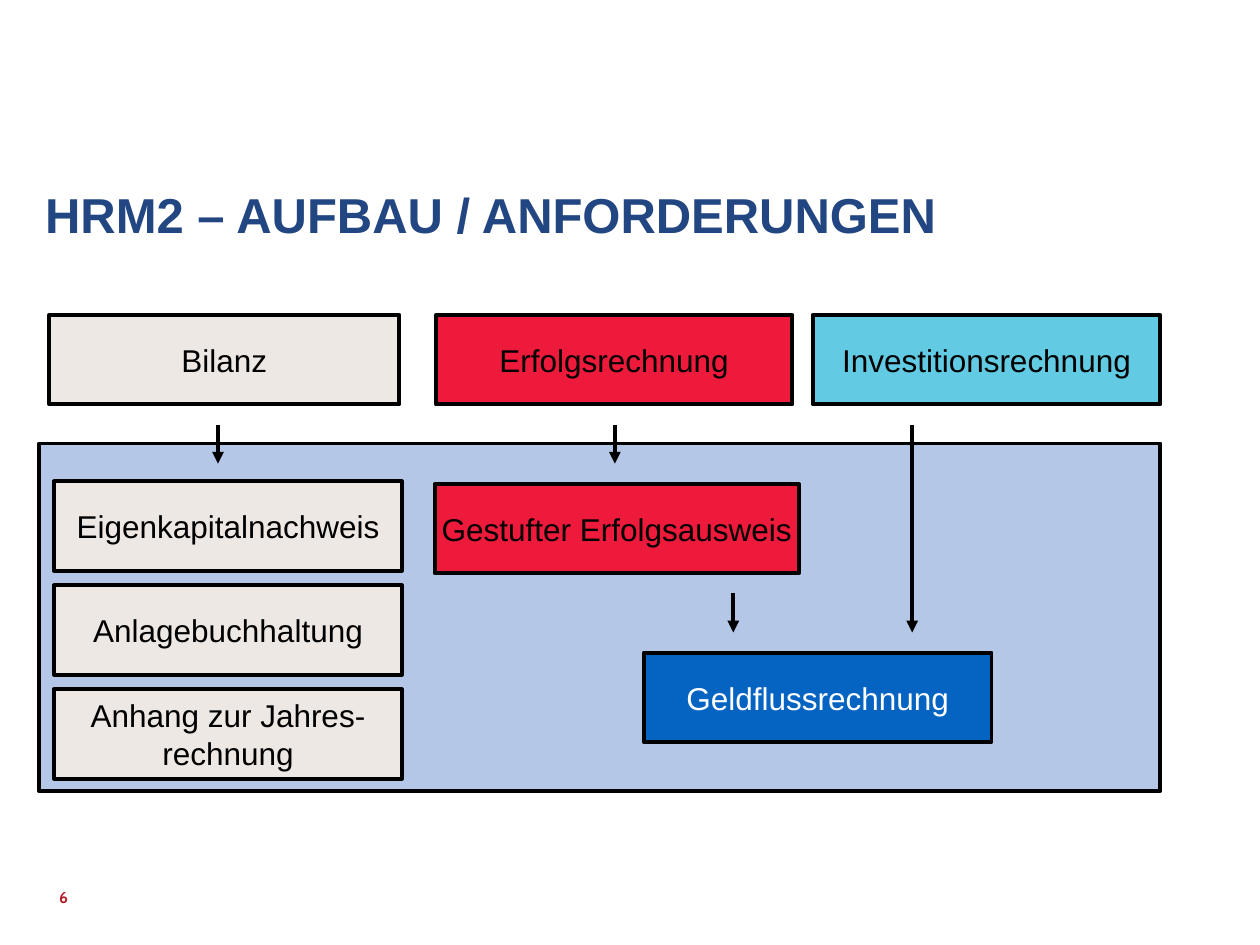
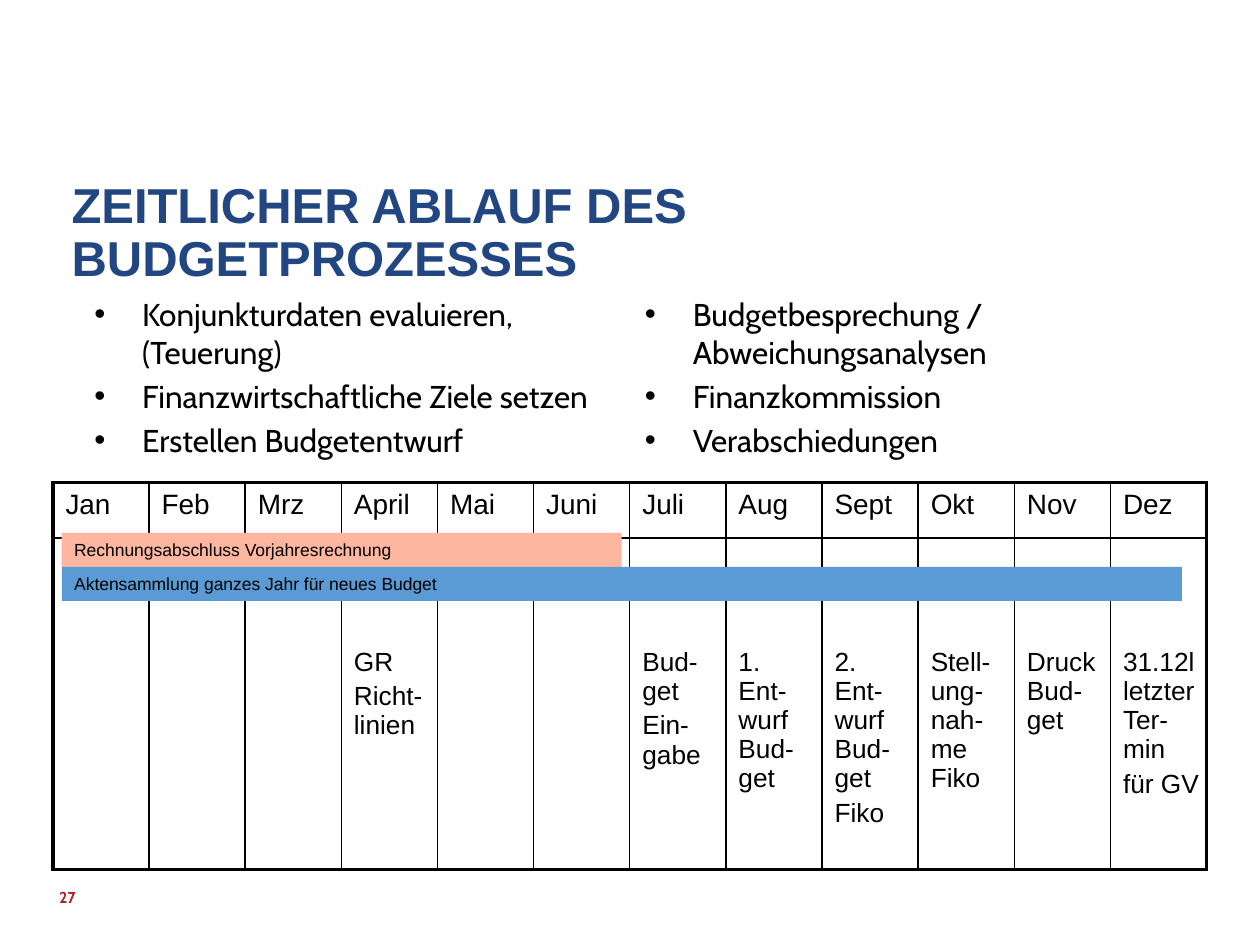
from dataclasses import dataclass

from lxml import etree
from pptx import Presentation
from pptx.dml.color import RGBColor
from pptx.enum.shapes import MSO_CONNECTOR, MSO_SHAPE
from pptx.enum.text import MSO_ANCHOR, PP_ALIGN
from pptx.oxml.ns import qn
from pptx.util import Inches, Pt

RECTANGLE = MSO_SHAPE.RECTANGLE
STRAIGHT = MSO_CONNECTOR.STRAIGHT
MIDDLE = MSO_ANCHOR.MIDDLE
LEFT, CENTER = PP_ALIGN.LEFT, PP_ALIGN.CENTER

# The slide is a grid of 100 columns and 75 rows of square cells.
COLUMNS, ROWS = 100, 75
CELL = Inches(0.1)


@dataclass(frozen=True)
class Theme:
    heading_font: str = "Arial"
    body_font: str = "Cabin"
    title: str = "224681"
    number: str = "B21D24"
    black: str = "000000"
    white: str = "FFFFFF"
    panel: str = "B4C7E7"
    balance: str = "EEE8E5"
    income: str = "ED1A3B"
    investment: str = "62CAE3"
    cash_flow: str = "0563C1"
    closing_bar: str = "FDB7A1"
    collection_bar: str = "5B9BD5"
    title_size: float = 28
    body_size: float = 18
    month_size: float = 16
    task_size: float = 15
    bar_size: float = 10
    number_size: float = 9
    thick: float = 2.25
    thin: float = 1


THEME = Theme()


@dataclass(frozen=True)
class Box:
    """An area in grid columns and rows."""
    left: float
    top: float
    width: float
    height: float

    def inner(self, column, row, width, height):
        return Box(self.left + column, self.top + row, width, height)

    def emu(self):
        return [round(n * CELL) for n in (self.left, self.top, self.width, self.height)]


def rgb(color):
    return RGBColor.from_string(color)


def style(para, size, color=THEME.black, font=THEME.heading_font, bold=False):
    para.font.size = Pt(size)
    para.font.name = font
    para.font.bold = bold
    para.font.color.rgb = rgb(color)


def fill_paragraphs(frame, texts):
    """Write one paragraph per text and yield each."""
    for index, text in enumerate(texts):
        para = frame.paragraphs[0] if index == 0 else frame.add_paragraph()
        para.text = text
        yield para


def add_text(page, box):
    frame = page.shapes.add_textbox(*box.emu()).text_frame
    frame.word_wrap = True
    return frame


def add_title(page, box, text):
    frame = add_text(page, box)
    frame.margin_right = Inches(0.3)
    para = frame.paragraphs[0]
    para.text = text
    para.line_spacing = 0.9
    style(para, THEME.title_size, THEME.title, bold=True)


def add_page_number(page, number):
    frame = add_text(page, Box(4.7, 69.2, 22.5, 4))
    frame.vertical_anchor = MIDDLE
    frame.margin_left = frame.margin_right = frame.margin_top = frame.margin_bottom = 0
    para = frame.paragraphs[0]
    para.text = str(number)
    style(para, THEME.number_size, THEME.number, THEME.body_font, bold=True)


def add_page(deck, title_box, title, number):
    page = deck.slides.add_slide(deck.slide_layouts[6])
    add_title(page, title_box, title)
    add_page_number(page, number)
    return page


def add_rectangle(page, box, fill, outlined=True):
    shape = page.shapes.add_shape(RECTANGLE, *box.emu())
    shape.shadow.inherit = False
    shape.fill.solid()
    shape.fill.fore_color.rgb = rgb(fill)
    if outlined:
        shape.line.color.rgb = rgb(THEME.black)
        shape.line.width = Pt(THEME.thick)
    else:
        shape.line.fill.background()
    return shape


def label(shape, text, size, color=THEME.black, align=CENTER):
    frame = shape.text_frame
    frame.word_wrap = False
    frame.vertical_anchor = MIDDLE
    frame.margin_top = frame.margin_bottom = 0
    para = frame.paragraphs[0]
    para.text = text
    para.alignment = align
    style(para, size, color)


def add_down_arrow(page, box):
    """Draw an arrow from the top to the bottom of a box without width."""
    left, top, _, height = box.emu()
    arrow = page.shapes.add_connector(STRAIGHT, left, top, left, top + height)
    arrow.line.color.rgb = rgb(THEME.black)
    arrow.line.width = Pt(THEME.thick)
    properties = arrow._element.spPr
    etree.SubElement(properties.find(qn("a:ln")), qn("a:tailEnd"), type="triangle")
    etree.SubElement(properties, qn("a:effectLst"))


def add_statement_diagram(page, area):
    node_height = 7.1
    add_rectangle(page, area.inner(0, 10.2, area.width, 27.6), THEME.panel)
    nodes = [
        ("Bilanz", 0.8, 0, 27.8, THEME.balance),
        ("Erfolgsrechnung", 31.5, 0, 28.3, THEME.income),
        ("Investitionsrechnung", 61.4, 0, 27.6, THEME.investment),
        ("Gestufter Erfolgsausweis", 31.4, 13.4, 28.9, THEME.income),
        ("Geldflussrechnung", 48, 26.8, 27.6, THEME.cash_flow),
    ]
    balance_details = ("Eigenkapitalnachweis", "Anlagebuchhaltung",
                       "Anhang zur Jahres-\vrechnung")
    nodes += [(text, 1.2, 13.2 + 8.25 * index, 27.6, THEME.balance)
              for index, text in enumerate(balance_details)]
    for text, column, row, width, fill in nodes:
        node = add_rectangle(page, area.inner(column, row, width, node_height), fill)
        color = THEME.white if fill == THEME.cash_flow else THEME.black
        label(node, text, THEME.body_size, color)
    for column, row, length in ((14.2, 8.7, 3.1), (45.7, 8.7, 3.1),
                                (55.1, 22.1, 3.1), (69.3, 8.7, 16.5)):
        add_down_arrow(page, area.inner(column, row, 0, length))


def add_bullets(page, box, texts):
    hanging = Inches(0.38)
    for index, para in enumerate(fill_paragraphs(add_text(page, box), texts)):
        properties = para._p.get_or_add_pPr()
        properties.set("marL", str(hanging))
        properties.set("indent", str(-hanging))
        etree.SubElement(properties, qn("a:buFont"), typeface="Arial")
        etree.SubElement(properties, qn("a:buChar"), char="•")
        if index:
            para.space_before = Pt(0.2 * THEME.body_size)
        style(para, THEME.body_size, font=THEME.body_font)


def set_borders(cell, widths):
    """Rule the left, right, top and bottom of a cell in that order."""
    properties = cell._tc.get_or_add_tcPr()
    for side, width in zip("LRTB", widths):
        line = etree.SubElement(properties, qn(f"a:ln{side}"), w=str(Pt(width)))
        solid = etree.SubElement(line, qn("a:solidFill"))
        etree.SubElement(solid, qn("a:srgbClr"), val=THEME.black)


def add_calendar(page, area, months):
    """Draw a table with a month and its tasks in each column."""
    header = 4.4
    table = page.shapes.add_table(2, len(months), *area.emu()).table
    table.first_row = table.horz_banding = False
    table.rows[0].height = round(header * CELL)
    table.rows[1].height = round((area.height - header) * CELL)
    last = len(months) - 1
    for index, (month, tasks) in enumerate(months):
        table.columns[index].width = round(area.width * CELL / len(months))
        for row, (texts, size) in enumerate((([month], THEME.month_size),
                                             (tasks or [""], THEME.task_size))):
            cell = table.cell(row, index)
            outer = (index == 0, index == last, row == 0, row == 1)
            set_borders(cell, [THEME.thick if edge else THEME.thin for edge in outer])
            cell.fill.solid()
            cell.fill.fore_color.rgb = rgb(THEME.white)
            cell.margin_right = Inches(0.06)
            cell.margin_top = Inches(0.87 if row else 0.05)
            for number, para in enumerate(fill_paragraphs(cell.text_frame, texts)):
                if number:
                    para.space_before = Pt(0.2 * size)
                style(para, size)


def add_year_bars(page, area):
    height = area.height / 2
    bars = (
        ("Rechnungsabschluss Vorjahresrechnung", 0.5, THEME.closing_bar),
        ("Aktensammlung ganzes Jahr für neues Budget", 1, THEME.collection_bar),
    )
    for index, (text, share, fill) in enumerate(bars):
        box = area.inner(0, index * height, area.width * share, height)
        label(add_rectangle(page, box, fill, outlined=False), text,
              THEME.bar_size, align=LEFT)


def build_structure_page(deck):
    page = add_page(deck, Box(2.6, 14.7, 90, 8.5),
                    "HRM2 – AUFBAU / ANFORDERUNGEN", 6)
    add_statement_diagram(page, Box(3.1, 25, 89, 37.8))


def build_schedule_page(deck):
    page = add_page(deck, Box(4.7, 13.9, 91.7, 9.4),
                    "ZEITLICHER ABLAUF DES BUDGETPROZESSES", 27)
    bullet_lists = (
        ("Konjunkturdaten evaluieren, (Teuerung)",
         "Finanzwirtschaftliche Ziele setzen", "Erstellen Budgetentwurf"),
        ("Budgetbesprechung / Abweichungsanalysen",
         "Finanzkommission", "Verabschiedungen"),
    )
    for index, texts in enumerate(bullet_lists):
        add_bullets(page, Box(6.5 + 43.7 * index, 22.9, 44.6, 14.6), texts)
    add_calendar(page, Box(4.2, 38.3, 91.6, 30.7), (
        ("Jan", []),
        ("Feb", []),
        ("Mrz", []),
        ("April", ["GR", "Richt-linien"]),
        ("Mai", []),
        ("Juni", []),
        ("Juli", ["Bud-get", "Ein-gabe"]),
        ("Aug", ["1. Ent-wurf Bud-get"]),
        ("Sept", ["2. Ent-wurf Bud-get", "Fiko"]),
        ("Okt", ["Stell-ung-nah-me Fiko"]),
        ("Nov", ["Druck Bud-get"]),
        ("Dez", ["31.12l\vletzter\vTer-min", "für GV"]),
    ))
    add_year_bars(page, Box(4.9, 42.3, 88.9, 5.4))


def main():
    deck = Presentation()
    deck.slide_width, deck.slide_height = COLUMNS * CELL, ROWS * CELL
    build_structure_page(deck)
    build_schedule_page(deck)
    deck.save("out.pptx")


if __name__ == "__main__":
    main()
